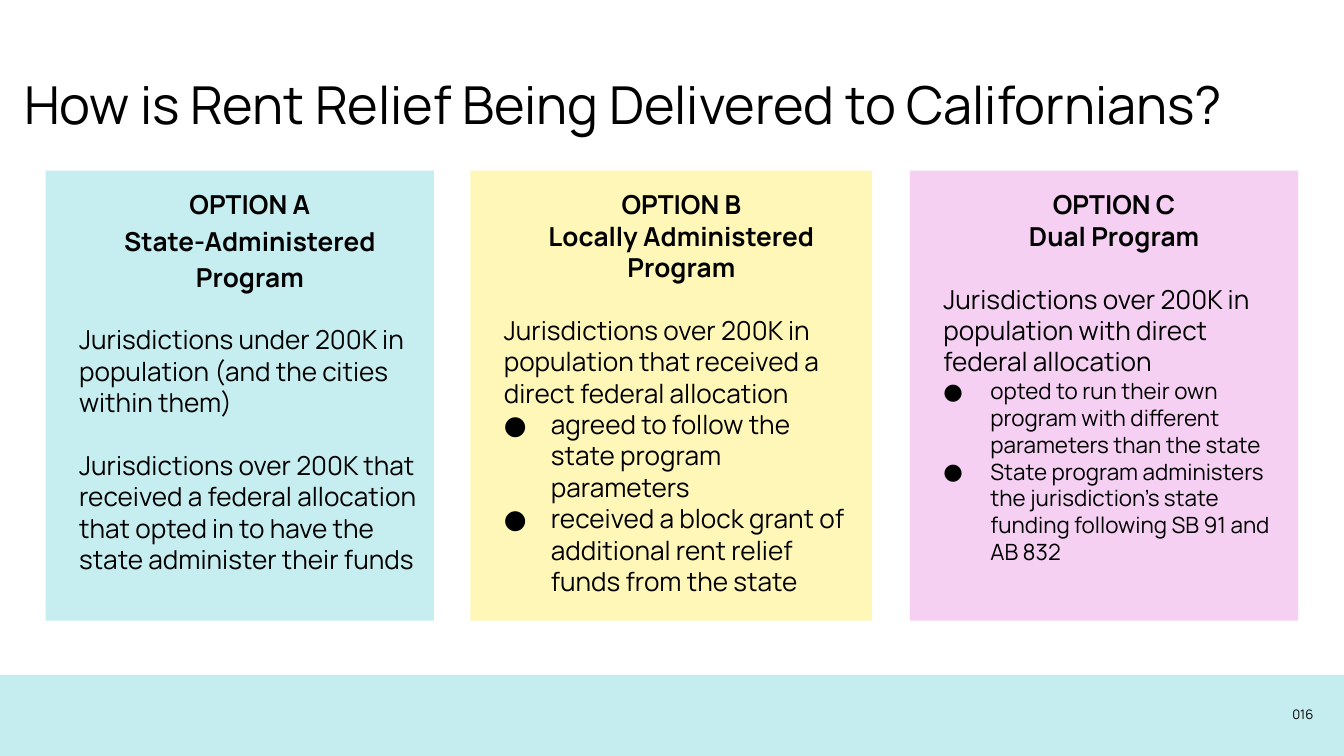
"""Build the slide on how rent relief is delivered to Californians."""
from dataclasses import dataclass

import pptx
import pptx.dml.color
import pptx.enum.shapes
import pptx.enum.text
import pptx.oxml.xmlchemy
import pptx.util
from lxml import etree

Pt = pptx.util.Pt
RGB = pptx.dml.color.RGBColor.from_string
ALIGN = pptx.enum.text.PP_ALIGN
ANCHOR = pptx.enum.text.MSO_ANCHOR
RECT = pptx.enum.shapes.MSO_SHAPE.RECTANGLE
A = "{http://schemas.openxmlformats.org/drawingml/2006/main}"


@dataclass(frozen=True)
class Theme:
    font: str = "Manrope"
    ink: str = "000000"
    band: str = "C5ECEF"
    state: str = "C6EDEF"
    local: str = "FFF391"
    dual: str = "F0B7EE"
    title: float = 28
    body: float = 14
    small: float = 12
    number: float = 7


theme = Theme()


def add_rect(left, top, width, height, color, opacity=100):
    sp = s.shapes.add_shape(RECT, Pt(left), Pt(top), Pt(width), Pt(height))
    sp.shadow.inherit = False
    sp.fill.solid()
    sp.fill.fore_color.rgb = RGB(color)
    sp.line.fill.background()
    if opacity < 100:
        clr = sp._element.spPr.find(f"{A}solidFill/{A}srgbClr")
        etree.SubElement(clr, f"{A}alpha", val=str(opacity * 1000))
    return sp


def add_text(tf, paragraphs, anchor=ANCHOR.TOP):
    tf.word_wrap = True
    tf.vertical_anchor = anchor
    tf.margin_left = tf.margin_right = tf.margin_top = tf.margin_bottom = Pt(7.2)
    for i, (text, size, bold, align, left, hang, spacing, before) in enumerate(paragraphs):
        p = tf.paragraphs[0] if i == 0 else tf.add_paragraph()
        p.text = text
        p.alignment = align
        p.line_spacing = spacing
        p.space_before = Pt(before)
        pPr = p._p.get_or_add_pPr()
        pPr.set("marL", str(Pt(left)))
        pPr.set("indent", str(Pt(-hang)))
        if hang:
            clr = etree.SubElement(pPr, f"{A}buClr")
            etree.SubElement(clr, f"{A}srgbClr", val=theme.ink)
            etree.SubElement(pPr, f"{A}buFont", typeface=theme.font)
            etree.SubElement(pPr, f"{A}buChar", char="●")
        r = p.runs[0]
        r.font.name = theme.font
        r.font.size = Pt(size)
        r.font.bold = bold
        r.font.color.rgb = RGB(theme.ink)


prs = pptx.Presentation()
prs.slide_width, prs.slide_height = Pt(720), Pt(405)
s = prs.slides.add_slide(prs.slide_layouts[6])

add_rect(-3, 361.5, 726, 45.5, theme.band)

number = s.shapes.add_textbox(Pt(667.5), Pt(367.2), Pt(43.2), Pt(31))
add_text(number.text_frame,
         [("016", theme.number, False, ALIGN.RIGHT, 0, 0, 1, 0)], ANCHOR.MIDDLE)

title = s.shapes.add_textbox(Pt(5.8), Pt(31.7), Pt(710.6), Pt(45.4))
add_text(title.text_frame,
         [("How is Rent Relief Being Delivered to Californians?",
           theme.title, False, ALIGN.LEFT, 0, 0, 1, 0)])

options = [
    (24.5, 208, theme.state, 100, "OPTION A", "State-Administered Program", 1.15,
     ["Jurisdictions under 200K in population (and the cities within them)",
      "Jurisdictions over 200K that received a federal allocation that opted in "
      "to have the state administer their funds"],
     [], theme.body),
    (252, 215.3, theme.local, 65, "OPTION B", "Locally Administered Program", 1,
     ["Jurisdictions over 200K in population that received a direct federal allocation"],
     ["agreed to follow the state program parameters",
      "received a block grant of additional rent relief funds from the state"],
     theme.body),
    (487.5, 208, theme.dual, 65, "OPTION C", "Dual Program", 1,
     ["Jurisdictions over 200K in population with direct federal allocation"],
     ["opted to run their own program with different parameters than the state",
      "State program administers the jurisdiction’s state funding following "
      "SB 91 and AB 832"],
     theme.small),
]
for left, width, color, opacity, label, name, spacing, groups, bullets, size in options:
    sp = add_rect(left, 91.5, width, 241, color, opacity)
    heads = [(label, theme.body, True, ALIGN.CENTER, 10.8, 0, 1.15, 0),
             (name, theme.body, True, ALIGN.CENTER, 10.8, 0, spacing, 0)]
    bodies = [(text, theme.body, False, ALIGN.LEFT, 10.8, 0, 1, 16.8) for text in groups]
    points = [(text, size, False, ALIGN.LEFT, 36, 25.2, 1, 0) for text in bullets]
    add_text(sp.text_frame, heads + bodies + points)

prs.save("out.pptx")
